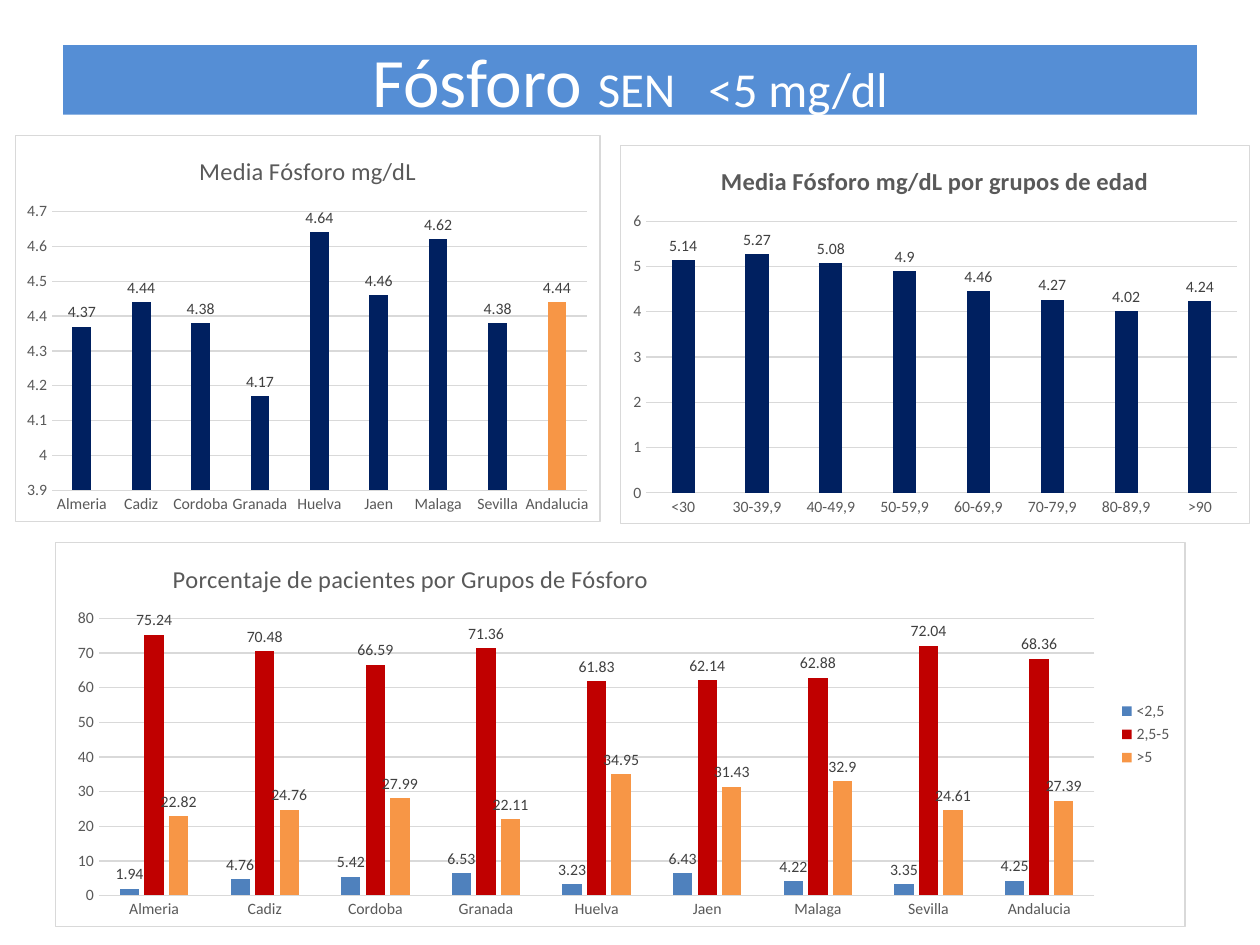
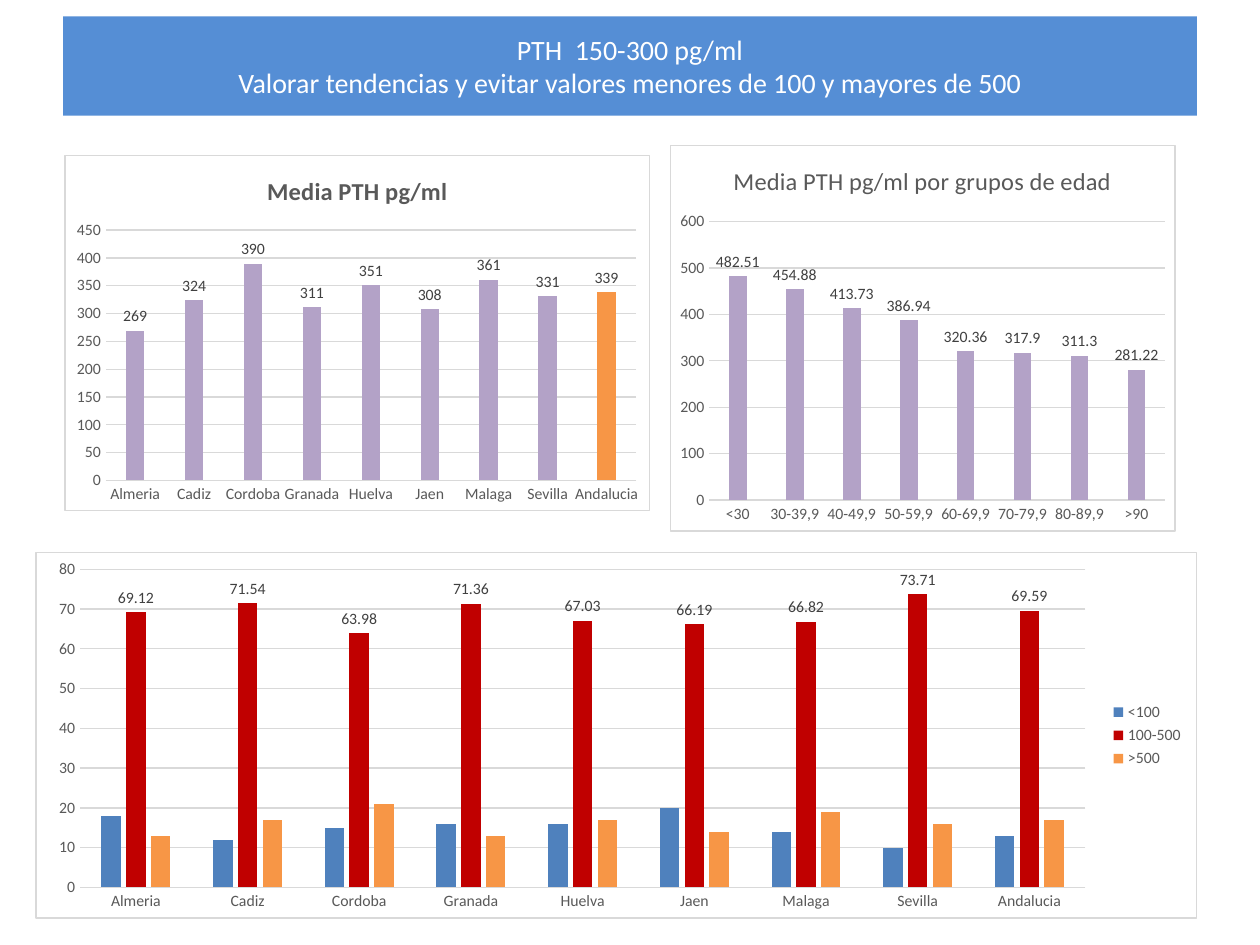
from lxml import etree
from pptx import Presentation
from pptx.chart.data import CategoryChartData
from pptx.dml.color import RGBColor
from pptx.enum.chart import XL_CHART_TYPE as ChartType
from pptx.enum.chart import XL_LABEL_POSITION as LabelPos
from pptx.enum.chart import XL_LEGEND_POSITION as LegendPos
from pptx.enum.chart import XL_TICK_MARK as Tick
from pptx.enum.text import MSO_ANCHOR as Anchor
from pptx.enum.text import MSO_AUTO_SIZE as AutoSize
from pptx.enum.text import PP_ALIGN as Align
from pptx.oxml import parse_xml
from pptx.oxml.ns import nsdecls, qn
from pptx.util import Cm, Pt

FONT = "Calibri"
WHITE = RGBColor(0xFF, 0xFF, 0xFF)
BLACK = RGBColor(0x00, 0x00, 0x00)
BAND = RGBColor(0x55, 0x8E, 0xD5)
NAVY = RGBColor(0x00, 0x20, 0x60)
LILAC = RGBColor(0xB3, 0xA2, 0xC7)
BLUE = RGBColor(0x4F, 0x81, 0xBD)
RED = RGBColor(0xC0, 0x00, 0x00)
ORANGE = RGBColor(0xF7, 0x96, 0x46)
GRID = RGBColor(0xD9, 0xD9, 0xD9)
GREY = RGBColor(0x59, 0x59, 0x59)
LABEL = RGBColor(0x40, 0x40, 0x40)

PROVINCES = ["Almeria", "Cadiz", "Cordoba", "Granada", "Huelva", "Jaen",
             "Malaga", "Sevilla", "Andalucia"]
AGES = ["<30", "30-39,9", "40-49,9", "50-59,9", "60-69,9", "70-79,9",
        "80-89,9", ">90"]
GROUP_COLORS = [BLUE, RED, ORANGE]


class Deck:
    def __init__(self):
        self.prs = Presentation()
        self.prs.slide_width, self.prs.slide_height = Cm(25.4), Cm(19.05)
        self.slide = None

    def new_slide(self):
        self.slide = self.prs.slides.add_slide(self.prs.slide_layouts[5])

    def style_font(self, font, size, color, bold=False):
        font.name, font.size, font.bold = FONT, Pt(size), bold
        font.color.rgb = color

    def style_line(self, line):
        line.color.rgb, line.width = GRID, Pt(0.75)

    def title(self, top, height, runs):
        sp = self.slide.shapes.title
        sp.left, sp.top, sp.width, sp.height = Cm(1.27), Cm(top), Cm(22.86), Cm(height)
        sp.fill.solid()
        sp.fill.fore_color.rgb = BAND
        tf = sp.text_frame
        tf.word_wrap, tf.auto_size = True, AutoSize.NONE
        tf.vertical_anchor = Anchor.MIDDLE
        p = tf.paragraphs[0]
        p.alignment = Align.CENTER
        self.style_font(p.font, runs[0][1], WHITE)
        for i, (text, size) in enumerate(runs):
            if i and size == runs[i - 1][1]:
                p.add_line_break()
            r = p.add_run()
            r.text, r.font.size = text, Pt(size)

    def chart(self, box, cats, series, colors, scale, labelled=None):
        data = CategoryChartData()
        data.categories = cats
        for name, values in series.items():
            data.add_series(name, values)
        chart = self.slide.shapes.add_chart(
            ChartType.COLUMN_CLUSTERED, *map(Cm, box), data).chart
        self.style_font(chart.font, 10, BLACK)
        self.frame(chart)
        self.axes(chart, scale)
        chart.has_title = False
        chart.has_legend = len(series) > 1
        if chart.has_legend:
            chart.legend.position = LegendPos.RIGHT
            chart.legend.include_in_layout = False
            self.style_font(chart.legend.font, 9, GREY)
        plot = chart.plots[0]
        plot.gap_width, plot.overlap, plot.vary_by_categories = 219, -27, False
        for s, color in zip(plot.series, colors):
            s.format.fill.solid()
            s.format.fill.fore_color.rgb = color
            if labelled is None or s.name in labelled:
                labels = s.data_labels
                labels.show_value, labels.position = True, LabelPos.OUTSIDE_END
                self.style_font(labels.font, 9, LABEL)
        return chart

    def frame(self, chart):
        sp_pr = parse_xml(
            f'<c:spPr {nsdecls("c", "a")}>'
            f'<a:solidFill><a:srgbClr val="{WHITE}"/></a:solidFill>'
            f'<a:ln w="{Pt(0.75)}"><a:solidFill><a:srgbClr val="{GRID}"/>'
            '</a:solidFill></a:ln></c:spPr>')
        chart.element.find(qn("c:txPr")).addprevious(sp_pr)

    def axes(self, chart, scale):
        cat, val = chart.category_axis, chart.value_axis
        for axis in (cat, val):
            axis.major_tick_mark = axis.minor_tick_mark = Tick.NONE
            self.style_font(axis.tick_labels.font, 9, GREY)
        self.style_line(cat.format.line)
        val.format.line.fill.background()
        val.has_major_gridlines = True
        self.style_line(val.major_gridlines.format.line)
        val.minimum_scale, val.maximum_scale, val.major_unit = scale

    def chart_title(self, chart, text, bold=False, place=None):
        tf = chart.chart_title.text_frame
        tf.text = text
        self.style_font(tf.paragraphs[0].font, 14, GREY, bold)
        chart.chart_title.include_in_layout = False
        if place:
            title = chart.chart_title._element
            for old in title.findall(qn("c:layout")):
                title.remove(old)
            layout = etree.Element(qn("c:layout"))
            manual = etree.SubElement(layout, qn("c:manualLayout"))
            for tag, value in zip(("xMode", "yMode", "x", "y"), ("edge", "edge", *place)):
                etree.SubElement(manual, qn(f"c:{tag}")).set("val", str(value))
            title.find(qn("c:tx")).addnext(layout)

    def mean_chart(self, box, cats, values, color, scale, title, bold=False):
        chart = self.chart(box, cats, {"Series 1": values}, [color], scale)
        self.chart_title(chart, title, bold)
        if cats is PROVINCES:
            fill = chart.plots[0].series[0].points[len(cats) - 1].format.fill
            fill.solid()
            fill.fore_color.rgb = ORANGE


def phosphorus_slide(deck):
    deck.new_slide()
    deck.title(0.91, 1.4, [("Fósforo ", 39.6), ("SEN   <5 mg/dl", 27.9)])
    deck.mean_chart((0.3, 2.72, 11.81, 7.8), PROVINCES,
                    [4.37, 4.44, 4.38, 4.17, 4.64, 4.46, 4.62, 4.38, 4.44],
                    NAVY, (3.9, 4.7, 0.1), "Media Fósforo mg/dL")
    deck.mean_chart((12.5, 2.92, 12.7, 7.65), AGES,
                    [5.14, 5.27, 5.08, 4.9, 4.46, 4.27, 4.02, 4.24],
                    NAVY, (0, 6, 1), "Media Fósforo mg/dL por grupos de edad", True)
    groups = {
        "<2,5": [1.94, 4.76, 5.42, 6.53, 3.23, 6.43, 4.22, 3.35, 4.25],
        "2,5-5": [75.24, 70.48, 66.59, 71.36, 61.83, 62.14, 62.88, 72.04, 68.36],
        ">5": [22.82, 24.76, 27.99, 22.11, 34.95, 31.43, 32.9, 24.61, 27.39],
    }
    chart = deck.chart((1.1, 10.92, 22.8, 7.77), PROVINCES, groups,
                       GROUP_COLORS, (0, 80, 10))
    deck.chart_title(chart, "Porcentaje de pacientes por Grupos de Fósforo",
                     place=(0.1, 0.04))


def pth_slide(deck):
    deck.new_slide()
    deck.title(0.33, 2, [
        ("PTH  150-300 pg/ml", 16),
        ("Valorar tendencias y evitar valores menores de 100 y mayores de 500", 16)])
    deck.mean_chart((1.3, 3.12, 11.81, 7.19), PROVINCES,
                    [269, 324, 390, 311, 351, 308, 361, 331, 339],
                    LILAC, (0, 450, 50), "Media PTH pg/ml", True)
    deck.mean_chart((13.5, 2.92, 10.2, 7.8), AGES,
                    [482.51, 454.88, 413.73, 386.94, 320.36, 317.9, 311.3, 281.22],
                    LILAC, (0, 600, 100), "Media PTH pg/ml por grupos de edad")
    groups = {
        "<100": [18, 12, 15, 16, 16, 20, 14, 10, 13],
        "100-500": [69.12, 71.54, 63.98, 71.36, 67.03, 66.19, 66.82, 73.71, 69.59],
        ">500": [13, 17, 21, 13, 17, 14, 19, 16, 17],
    }
    deck.chart((0.71, 11.13, 23.42, 7.39), PROVINCES, groups, GROUP_COLORS,
               (0, 80, 10), labelled=["100-500"])


def main():
    deck = Deck()
    phosphorus_slide(deck)
    pth_slide(deck)
    deck.prs.save("out.pptx")


if __name__ == "__main__":
    main()
